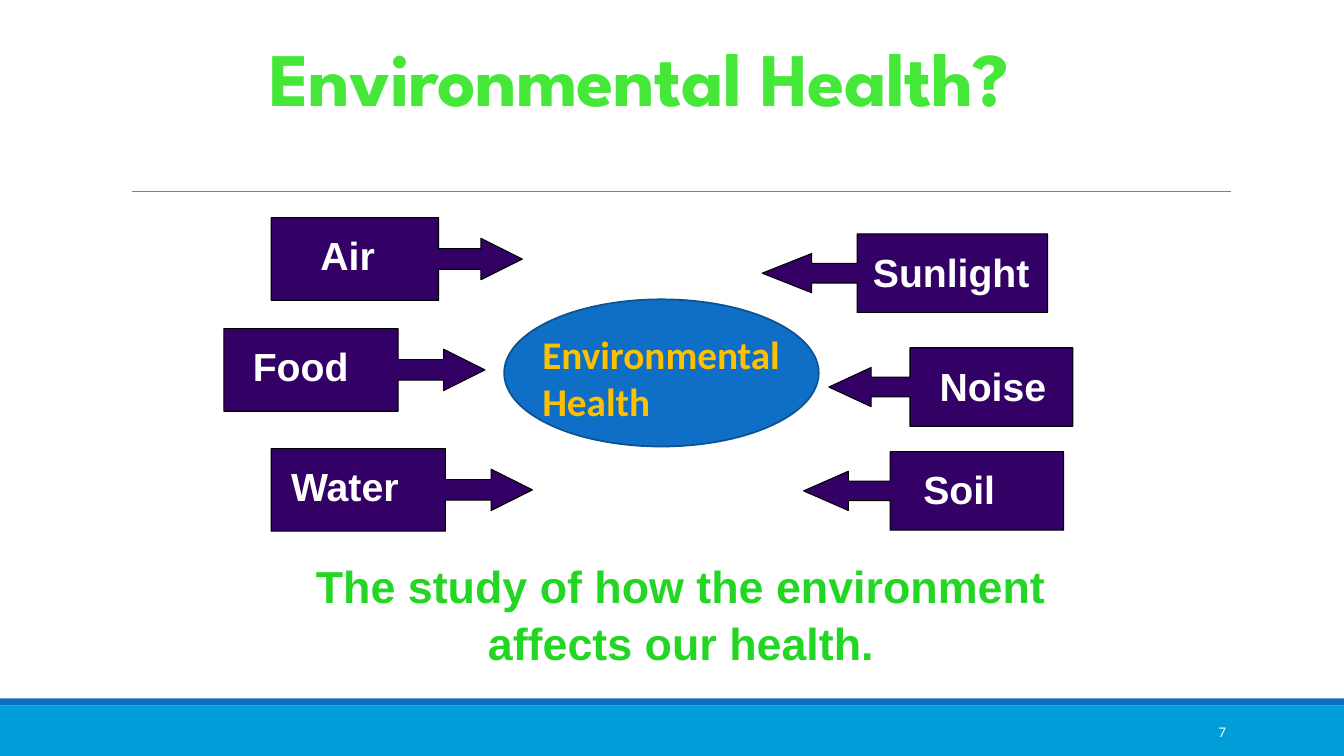
"""Build the environmental health slide with its six factor callouts."""
from dataclasses import dataclass

import pptx
import pptx.util
import pptx.dml.color
import pptx.enum.shapes
import pptx.enum.text
import pptx.oxml
import pptx.oxml.ns
import pptx.shapes.autoshape
import pptx.slide

Inches = pptx.util.Inches
Pt = pptx.util.Pt
RGBColor = pptx.dml.color.RGBColor
Shape = pptx.enum.shapes.MSO_SHAPE
Align = pptx.enum.text.PP_ALIGN
Anchor = pptx.enum.text.MSO_ANCHOR

WHITE = RGBColor(0xFF, 0xFF, 0xFF)
BLACK = RGBColor(0, 0, 0)
GRAY = RGBColor(0x80, 0x80, 0x80)
SKY = RGBColor(0x00, 0x9D, 0xD9)
BLUE = RGBColor(0x0F, 0x6F, 0xC6)
NAVY = RGBColor(0x0B, 0x52, 0x92)
PURPLE = RGBColor(0x33, 0x00, 0x66)
LIME = RGBColor(0x45, 0xE8, 0x38)
GREEN = RGBColor(0x24, 0xD6, 0x24)
GOLD = RGBColor(0xFF, 0xC0, 0x00)


@dataclass
class Box:
    left: float
    top: float
    width: float
    height: float

    def place(self) -> list[int]:
        return [Inches(n) for n in (self.left, self.top, self.width, self.height)]


@dataclass
class Style:
    font: str
    size: float
    color: RGBColor
    bold: bool = True
    align: Align = Align.LEFT
    space: float = 1.0


@dataclass
class Factor:
    label: str
    left: float
    top: float
    width: float
    text: float
    head: float = 0.5


@dataclass
class Side:
    kind: Shape
    height: float
    factors: list[Factor]


TITLE = Style("League Spartan", 54, LIME, space=0.85)
LABEL = Style("Arial", 28, WHITE)
CORE = Style("Calibri", 28, GOLD)
STUDY = Style("Arial", 32, GREEN, align=Align.CENTER, space=1.05)
NUMBER = Style("Calibri", 10.5, WHITE, False, Align.RIGHT)

SIDES = [
    Side(Shape.RIGHT_ARROW_CALLOUT, 0.82, [
        Factor("Air", 2.69, 2.16, 2.49, 3.08),
        Factor("Food", 2.22, 3.26, 2.59, 2.41),
        Factor("Water", 2.69, 4.45, 2.59, 2.79),
    ]),
    Side(Shape.LEFT_ARROW_CALLOUT, 0.78, [
        Factor("Sunlight", 7.56, 2.32, 2.83, 8.56, 0.63),
        Factor("Noise", 8.22, 3.45, 2.42, 9.22, 0.54),
        Factor("Soil", 7.97, 4.48, 2.58, 9.06, 0.57),
    ]),
]


def write(frame: pptx.text.text.TextFrame, text: str, style: Style,
          anchor: Anchor = Anchor.TOP) -> None:
    frame.text = text
    frame.word_wrap = True
    frame.auto_size = pptx.enum.text.MSO_AUTO_SIZE.NONE
    frame.vertical_anchor = anchor
    for para in frame.paragraphs:
        para.alignment = style.align
        para.line_spacing = style.space
        para.font.name = style.font
        para.font.size = Pt(style.size)
        para.font.bold = style.bold
        para.font.color.rgb = style.color


def add_text(slide: pptx.slide.Slide, box: Box, text: str, style: Style,
             anchor: Anchor = Anchor.TOP) -> None:
    write(slide.shapes.add_textbox(*box.place()).text_frame, text, style, anchor)


def add_form(slide: pptx.slide.Slide, kind: Shape, box: Box, fill: RGBColor,
             line: RGBColor | None = None,
             weight: float = 0.75) -> pptx.shapes.autoshape.Shape:
    form = slide.shapes.add_shape(kind, *box.place())
    form.shadow.inherit = False
    form.fill.solid()
    form.fill.fore_color.rgb = fill
    if line is None:
        form.line.fill.background()
    else:
        form.line.color.rgb = line
        form.line.width = Pt(weight)
    return form


def add_rule(slide: pptx.slide.Slide) -> None:
    rule = slide.shapes.add_connector(
        pptx.enum.shapes.MSO_CONNECTOR.STRAIGHT,
        Inches(1.31), Inches(1.9), Inches(12.21), Inches(1.9))
    rule.line.color.rgb = GRAY
    rule.line.width = Pt(0.5)
    props = rule._element.spPr
    props.append(pptx.oxml.parse_xml(
        f"<a:effectLst {pptx.oxml.ns.nsdecls('a')}/>"))


def add_title(slide: pptx.slide.Slide) -> None:
    title = slide.shapes.title
    title.left, title.top, title.width, title.height = Box(2.57, 0.31, 8.25, 0.95).place()
    write(title.text_frame, "Environmental Health?", TITLE, Anchor.BOTTOM)
    run = title.text_frame.paragraphs[0].runs[0]
    run.font._element.set("spc", "-50")


def add_factor(slide: pptx.slide.Slide, side: Side, factor: Factor) -> None:
    box = Box(factor.left, factor.top, factor.width, side.height)
    form = add_form(slide, side.kind, box, PURPLE, BLACK)
    for i, ratio in enumerate((0.25, 0.25, factor.head, 0.667)):
        form.adjustments[i] = ratio
    add_text(slide, Box(factor.text, factor.top + 0.09, 1.83, 0.58),
             factor.label, LABEL)


def main() -> None:
    deck = pptx.Presentation()
    deck.slide_width, deck.slide_height = Inches(13.33), Inches(7.5)
    slide = deck.slides.add_slide(deck.slide_layouts[5])
    add_form(slide, Shape.RECTANGLE, Box(0, 7, 13.33, 0.5), SKY)
    add_form(slide, Shape.RECTANGLE, Box(0, 6.93, 13.33, 0.07), BLUE)
    add_rule(slide)
    add_title(slide)
    add_form(slide, Shape.OVAL, Box(5, 2.97, 3.12, 1.46), BLUE, NAVY, 1.25)
    add_text(slide, Box(5.28, 3.23, 2.69, 1.04), "Environmental Health", CORE)
    for side in SIDES:
        for factor in side.factors:
            add_factor(slide, side, factor)
    add_text(slide, Box(2.42, 5.47, 8.67, 1.18),
             "The study of how the environment\naffects our health.", STUDY)
    add_text(slide, Box(10.83, 7.06, 1.43, 0.4), "7", NUMBER, Anchor.MIDDLE)
    deck.save("out.pptx")


if __name__ == "__main__":
    main()
